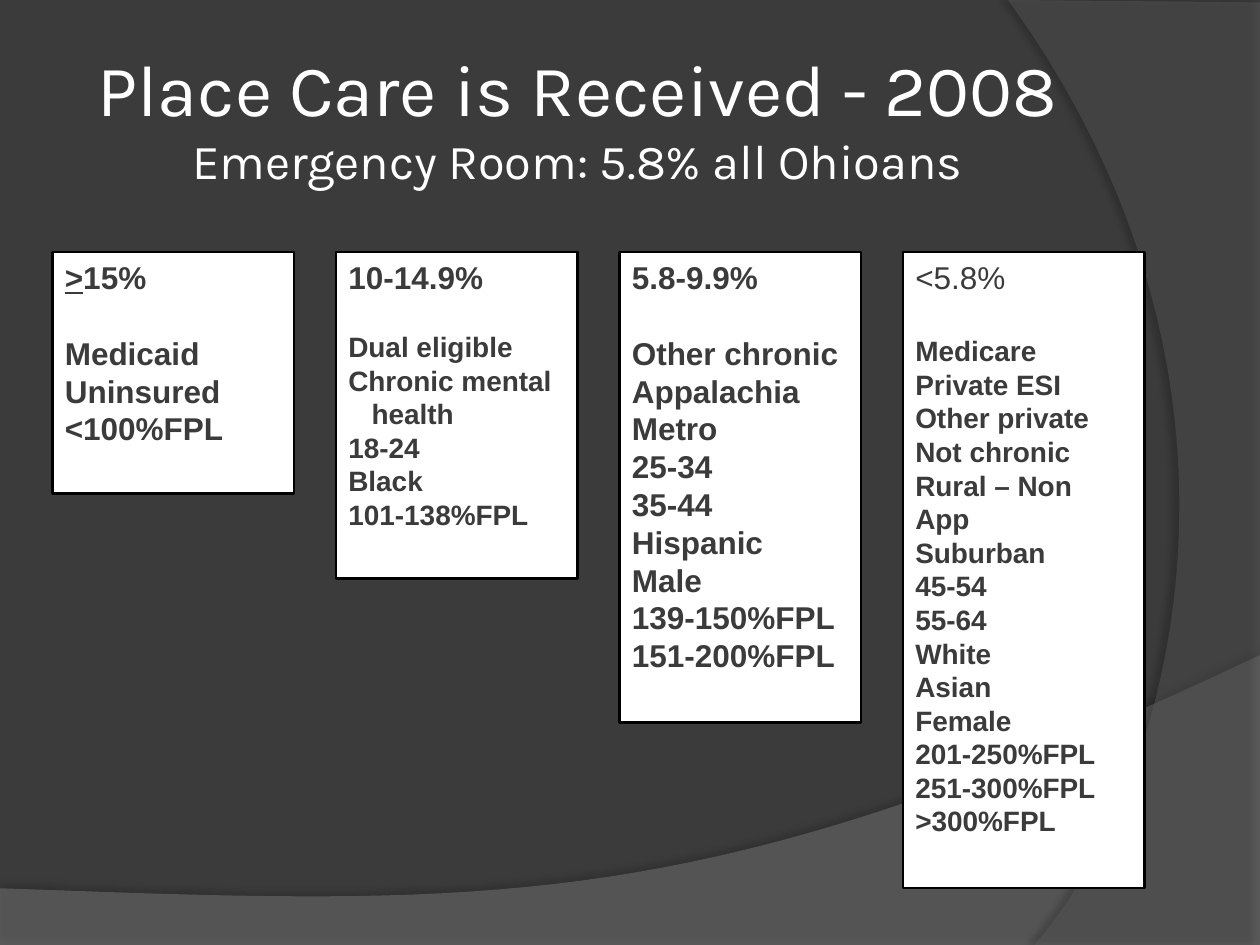
from pptx import Presentation
from pptx.dml.color import RGBColor
from pptx.enum.shapes import MSO_SHAPE as SHAPE
from pptx.enum.text import MSO_ANCHOR as ANCHOR, PP_ALIGN as ALIGN
from pptx.oxml import parse_xml
from pptx.oxml.ns import nsdecls, qn
from pptx.util import Pt


def color(value):
    return RGBColor.from_string(value)


def write(paragraph, text, size=18, font="Arial", ink="3B3B3B", bold=True, underline=False):
    run = paragraph.add_run()
    run.text = text
    run.font.size = Pt(size)
    run.font.name = font
    run.font.color.rgb = color(ink)
    run.font.bold = bold
    run.font.underline = underline


prs = Presentation()
prs.slide_width, prs.slide_height = Pt(720), Pt(540)
slide = prs.slides.add_slide(prs.slide_layouts[6])
slide.background.fill.solid()
slide.background.fill.fore_color.rgb = color("3B3B3B")

STEPS = 40
swooshes = [
    ([(720, 374.4), (402.5, 524.9), (281.5, 517.7), (0, 507.6)],
     [(0, 540), (720, 540)], "7F7F7F", 45, 35, 3.5, 270),
    ([(591.1, 540), (673.2, 445.7), (733, 216), (576, 0)],
     [(720, 1.4), (720, 540)], "5E5E5E", 40, 45, 4, 180),
]
for curve, corners, tint, opacity, shade, distance, angle in swooshes:
    edge = []
    for step in range(STEPS + 1):
        t = step / STEPS
        weights = ((1 - t) ** 3, 3 * t * (1 - t) ** 2, 3 * t * t * (1 - t), t ** 3)
        edge.append([sum(w * p[axis] for w, p in zip(weights, curve)) for axis in (0, 1)])
    outline = [(Pt(x), Pt(y)) for x, y in edge + corners]
    builder = slide.shapes.build_freeform(*outline[0])
    builder.add_line_segments(outline[1:], close=True)
    swoosh = builder.convert_to_shape()
    swoosh.fill.solid()
    swoosh.fill.fore_color.rgb = color(tint)
    swoosh.line.fill.background()
    swoosh.shadow.inherit = False
    props = swoosh.element.spPr
    props.find(qn("a:solidFill"))[0].append(
        parse_xml(f'<a:alpha {nsdecls("a")} val="{opacity * 1000}"/>'))
    props.find(qn("a:effectLst")).append(parse_xml(
        f'<a:outerShdw {nsdecls("a")} blurRad="{Pt(4)}" dist="{Pt(distance)}" '
        f'dir="{angle * 60000}" algn="ctr" rotWithShape="0"><a:srgbClr val="000000">'
        f'<a:alpha val="{shade * 1000}"/></a:srgbClr></a:outerShdw>'))

heading = slide.shapes.add_textbox(Pt(36), Pt(21.6), Pt(588), Pt(90)).text_frame
heading.word_wrap = True
heading.vertical_anchor = ANCHOR.MIDDLE
heading.margin_left = heading.margin_right = Pt(3.6)
title = heading.paragraphs[0]
title.alignment = ALIGN.CENTER
write(title, "Place Care is Received - 2008", size=41.4, font="Karla", ink="FFFFFF", bold=False)
title.add_line_break()
write(title, "Emergency Room: 5.8% all Ohioans", size=27.9, font="Karla", ink="FFFFFF", bold=False)

rate_groups = [
    (">15%", 138, 18, 18, ["Medicaid", "Uninsured", "<100%FPL"]),
    ("10-14.9%", 186.5, 16, 16,
     ["Dual eligible", "Chronic mental", "health", "18-24", "Black", "101-138%FPL"]),
    ("5.8-9.9%", 269, 18, 18,
     ["Other chronic", "Appalachia", "Metro", "25-34", "35-44", "Hispanic", "Male",
      "139-150%FPL", "151-200%FPL"]),
    ("<5.8%", 363.5, 16, 18,
     ["Medicare", "Private ESI", "Other private", "Not chronic", "Rural – Non App",
      "Suburban", "45-54", "55-64", "White", "Asian", "Female", "201-250%FPL",
      "251-300%FPL", ">300%FPL"]),
]
for column, (rate, height, size, gap, members) in enumerate(rate_groups):
    card = slide.shapes.add_shape(SHAPE.RECTANGLE, Pt(30 + 162 * column), Pt(144), Pt(138), Pt(height))
    card.shadow.inherit = False
    card.fill.solid()
    card.fill.fore_color.rgb = color("FFFFFF")
    card.line.color.rgb = color("000000")
    card.line.width = Pt(1.5)
    frame = card.text_frame
    frame.word_wrap = True
    frame.vertical_anchor = ANCHOR.TOP
    label = frame.paragraphs[0]
    label.alignment = ALIGN.LEFT
    label.line_spacing = Pt(21.6)
    if rate.startswith(">"):
        write(label, ">", underline=True)
        write(label, rate[1:])
    else:
        write(label, rate, bold=not rate.startswith("<"))
    for row, member in enumerate(members):
        entry = frame.add_paragraph()
        if member == "health":
            entry._p.get_or_add_pPr().set("marL", str(Pt(13.3)))
        entry.alignment = ALIGN.LEFT
        entry.line_spacing = Pt(1.2 * size)
        if row == 0:
            entry.space_before = Pt(1.2 * gap)
        write(entry, member, size=size)

prs.save("out.pptx")
